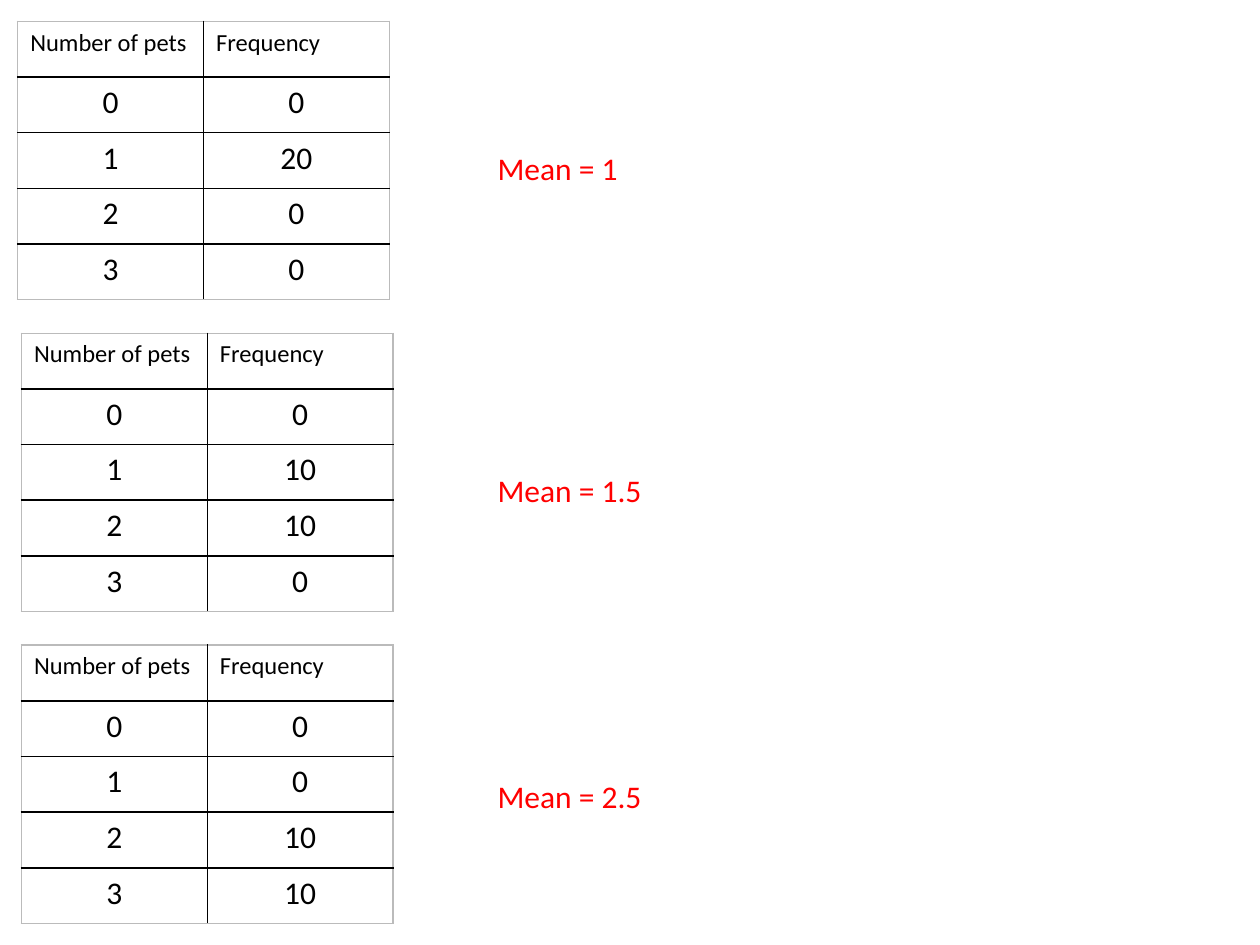
"""Build a slide of three pet frequency tables, each with its mean."""
from lxml import etree
from pptx import Presentation
from pptx.dml.color import RGBColor
from pptx.enum.text import MSO_AUTO_SIZE, PP_ALIGN
from pptx.oxml.ns import qn
from pptx.util import Inches, Pt

CENTER = PP_ALIGN.CENTER
LEFT = PP_ALIGN.LEFT
GROW = MSO_AUTO_SIZE.SHAPE_TO_FIT_TEXT
BLACK = RGBColor(0x00, 0x00, 0x00)
RED = RGBColor(0xFF, 0x00, 0x00)
GRAY = RGBColor(0xBB, 0xBB, 0xBB)
FONT = "Calibri"

HEADERS = ("Number of pets", "Frequency")
PET_COUNTS = (0, 1, 2, 3)
SURVEYS = [
    {"frequencies": (0, 20, 0, 0), "mean": "Mean = 1", "left": 0.14, "mean_top": 1.13},
    {"frequencies": (0, 10, 10, 0), "mean": "Mean = 1.5", "left": 0.17, "mean_top": 3.69},
    {"frequencies": (0, 0, 10, 10), "mean": "Mean = 2.5", "left": 0.17, "mean_top": 6.12},
]
FIRST_TOP, TABLE_STEP = 0.17, 2.475
COLUMN_WIDTH, ROW_HEIGHT = 1.475, 0.442
MEAN_LEFT, MEAN_WIDTH, MEAN_HEIGHT = 3.85, 2.89, 0.4


def write(frame, text, size, color, align=LEFT):
    para = frame.paragraphs[0]
    para.alignment = align
    span = para.add_run()
    span.text = text
    span.font.name = FONT
    span.font.size = Pt(size)
    span.font.color.rgb = color


def add_borders(cell, outer_sides):
    properties = cell._tc.get_or_add_tcPr()
    for position, side in enumerate("LRTB"):
        line = etree.Element(qn(f"a:ln{side}"), w=str(Pt(1)))
        fill = etree.SubElement(line, qn("a:solidFill"))
        color = GRAY if side in outer_sides else BLACK
        etree.SubElement(fill, qn("a:srgbClr"), val=str(color))
        properties.insert(position, line)


def add_frequency_table(page, left, top, frequencies):
    rows = [HEADERS, *zip(PET_COUNTS, frequencies)]
    row_total, column_total = len(rows), len(HEADERS)
    table = page.shapes.add_table(
        row_total, column_total, Inches(left), Inches(top),
        Inches(COLUMN_WIDTH * column_total), Inches(ROW_HEIGHT * row_total),
    ).table
    table.first_row = False
    table.horz_banding = False
    for column in table.columns:
        column.width = Inches(COLUMN_WIDTH)
    for r, values in enumerate(rows):
        table.rows[r].height = Inches(ROW_HEIGHT)
        for c, value in enumerate(values):
            cell = table.cell(r, c)
            cell.fill.background()
            edges = {"L": c == 0, "R": c == column_total - 1,
                     "T": r == 0, "B": r == row_total - 1}
            add_borders(cell, [side for side, outer in edges.items() if outer])
            size, align = (14, LEFT) if r == 0 else (18, CENTER)
            write(cell.text_frame, str(value), size, BLACK, align)


def add_mean(page, text, top):
    box = page.shapes.add_textbox(
        Inches(MEAN_LEFT), Inches(top), Inches(MEAN_WIDTH), Inches(MEAN_HEIGHT))
    box.text_frame.word_wrap = True
    box.text_frame.auto_size = GROW
    write(box.text_frame, text, 18, RED)


def main():
    deck = Presentation()
    deck.slide_width, deck.slide_height = Inches(10), Inches(7.5)
    page = deck.slides.add_slide(deck.slide_layouts[6])
    for index, survey in enumerate(SURVEYS):
        top = FIRST_TOP + index * TABLE_STEP
        add_frequency_table(page, survey["left"], top, survey["frequencies"])
    for survey in SURVEYS:
        add_mean(page, survey["mean"], survey["mean_top"])
    deck.save("out.pptx")


if __name__ == "__main__":
    main()
